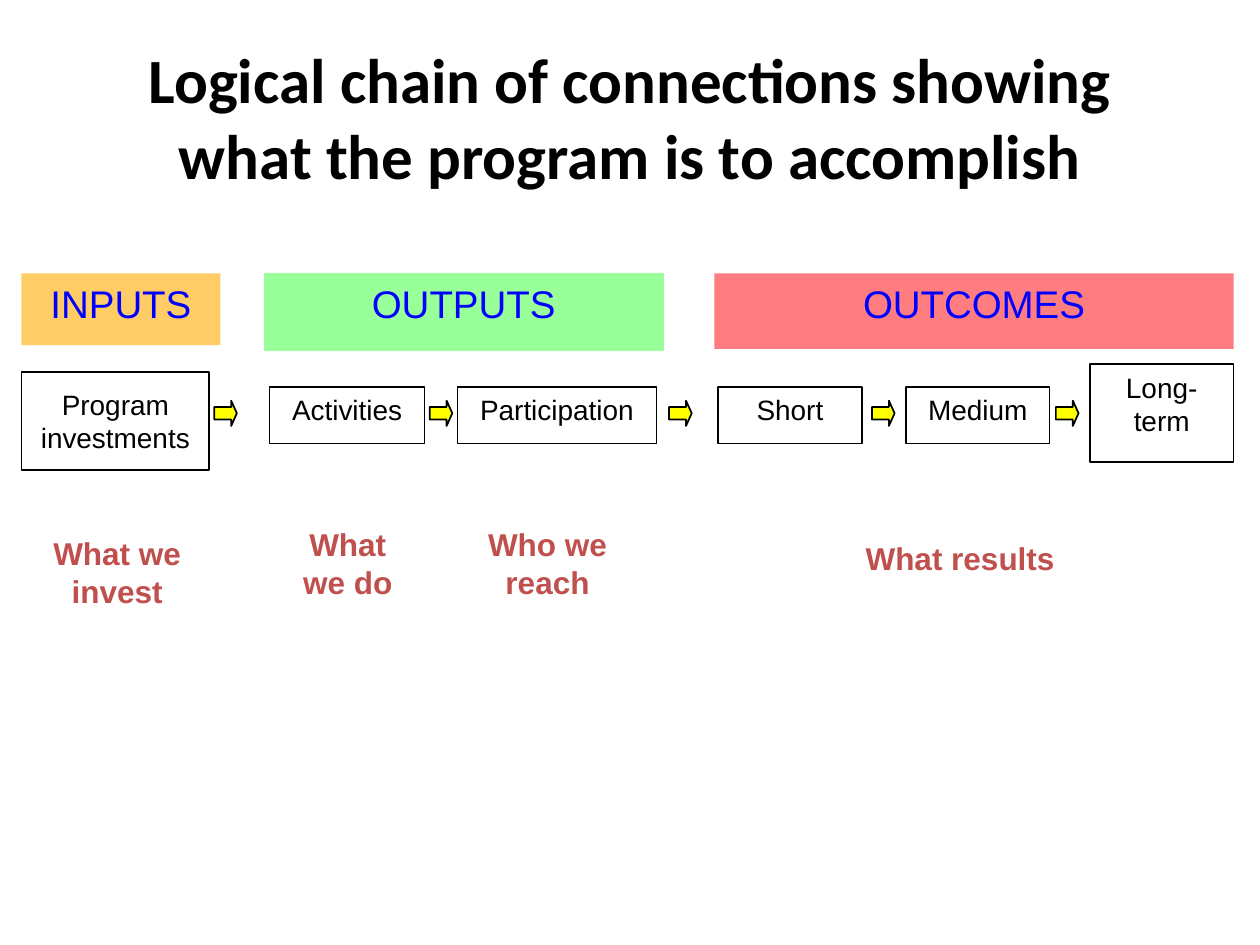
import pptx
import pptx.util
from pptx.dml.color import RGBColor
from pptx.enum.shapes import MSO_SHAPE
from pptx.enum.text import MSO_ANCHOR, PP_ALIGN

SLIDE_WIDTH = pptx.util.Inches(10)
SLIDE_HEIGHT = pptx.util.Inches(7.5)

# Places are left, top, width, height in percent of the slide.
BAND_TOP = 28.93
STEP_TOP, STEP_HEIGHT, TALL_STEP_HEIGHT = 40.93, 6, 10.4
ARROW_TOP, ARROW_WIDTH, ARROW_HEIGHT = 42.4, 1.8, 2.67
CAPTION_TOP, CAPTION_HEIGHT = 54.93, 11.2
TERM_WIDTH = 11.4

BANDS = [
    ("INPUTS", 1.7, 15.8, 7.6, "FFCC66"),
    ("OUTPUTS", 21, 31.6, 8.13, "99FF99"),
    ("OUTCOMES", 56.7, 41.2, 8, "FF7C80"),
]
STEPS = [
    ("Program investments", (1.7, 39.33, 14.9, TALL_STEP_HEIGHT), MSO_ANCHOR.MIDDLE),
    ("Activities", (21.4, STEP_TOP, 12.3, STEP_HEIGHT), MSO_ANCHOR.TOP),
    ("Participation", (36.3, STEP_TOP, 15.8, STEP_HEIGHT), MSO_ANCHOR.TOP),
    ("Short", (57, STEP_TOP, TERM_WIDTH, STEP_HEIGHT), MSO_ANCHOR.TOP),
    ("Medium", (71.9, STEP_TOP, TERM_WIDTH, STEP_HEIGHT), MSO_ANCHOR.TOP),
    ("Long-term", (86.5, 38.53, TERM_WIDTH, TALL_STEP_HEIGHT), MSO_ANCHOR.TOP),
]
ARROW_LEFTS = [17, 34.1, 53.1, 69.2, 83.8]
CAPTIONS = [
    ("What we invest", (2, 55.87, 14.6, CAPTION_HEIGHT)),
    ("What we do", (21.9, CAPTION_TOP, 11.4, CAPTION_HEIGHT)),
    ("Who we reach", (36.7, CAPTION_TOP, 13.5, CAPTION_HEIGHT)),
    ("What results", (55.6, 56.4, 41.2, 6.4)),
]


def color(hex_code):
    return RGBColor.from_string(hex_code)


def to_slide(place):
    left, top, width, height = place
    return (
        int(SLIDE_WIDTH * left / 100),
        int(SLIDE_HEIGHT * top / 100),
        int(SLIDE_WIDTH * width / 100),
        int(SLIDE_HEIGHT * height / 100),
    )


def write(holder, wording, size, ink, bold=False, font="Arial", anchor=MSO_ANCHOR.TOP):
    """Put one centred, wrapping paragraph into a shape or text box."""
    frame = holder.text_frame
    frame.word_wrap = True
    frame.vertical_anchor = anchor
    paragraph = frame.paragraphs[0]
    paragraph.alignment = PP_ALIGN.CENTER
    run = paragraph.add_run()
    run.text = wording
    run.font.name = font
    run.font.size = pptx.util.Pt(size)
    run.font.bold = bold
    run.font.color.rgb = color(ink)


def add_label(slide, place, wording, size, ink, **style):
    label = slide.shapes.add_textbox(*to_slide(place))
    write(label, wording, size, ink, bold=True, **style)


def add_block(slide, preset, place, fill=None, line=None):
    block = slide.shapes.add_shape(preset, *to_slide(place))
    block.shadow.inherit = False
    if fill:
        block.fill.solid()
        block.fill.fore_color.rgb = color(fill)
    else:
        block.fill.background()
    if line:
        block.line.color.rgb = color(line)
        block.line.width = pptx.util.Pt(1)
    else:
        block.line.fill.background()
    return block


def add_band(slide, heading, left, width, height, fill):
    outline = fill if heading == "OUTPUTS" else None
    place = (left, BAND_TOP, width, height)
    band = add_block(slide, MSO_SHAPE.RECTANGLE, place, fill, outline)
    write(band, heading, 22, "0000FF")


def add_step(slide, wording, place, anchor):
    step = add_block(slide, MSO_SHAPE.RECTANGLE, place, line="000000")
    write(step, wording, 16, "000000", anchor=anchor)


def add_arrow(slide, left):
    place = (left, ARROW_TOP, ARROW_WIDTH, ARROW_HEIGHT)
    arrow = add_block(slide, MSO_SHAPE.RIGHT_ARROW, place, "FFFF00", "000000")
    arrow.adjustments[0] = 0.5
    arrow.adjustments[1] = 0.25


def main():
    deck = pptx.Presentation()
    deck.slide_width, deck.slide_height = SLIDE_WIDTH, SLIDE_HEIGHT
    slide = deck.slides.add_slide(deck.slide_layouts[6])

    add_label(
        slide,
        (5, 4, 90, 16.67),
        "Logical chain of connections showing what the program is to accomplish",
        36,
        "000000",
        font="Calibri",
        anchor=MSO_ANCHOR.MIDDLE,
    )
    for band in BANDS:
        add_band(slide, *band)
    for step in STEPS:
        add_step(slide, *step)
    for left in ARROW_LEFTS:
        add_arrow(slide, left)
    for wording, place in CAPTIONS:
        add_label(slide, place, wording, 18, "C0504D")

    deck.save("out.pptx")


if __name__ == "__main__":
    main()
